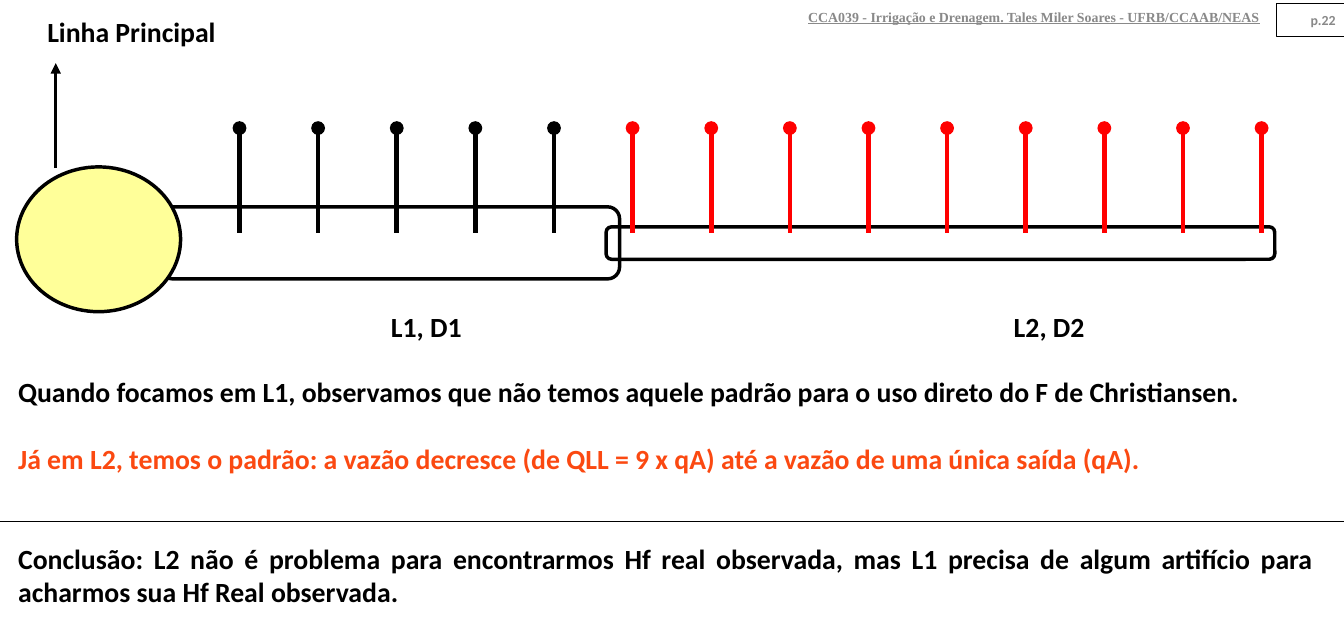
from lxml.etree import SubElement
from pptx import Presentation
from pptx.dml.color import RGBColor
from pptx.enum.shapes import MSO_CONNECTOR, MSO_SHAPE
from pptx.enum.text import MSO_ANCHOR, PP_ALIGN
from pptx.oxml.ns import qn
from pptx.util import Cm, Pt

WIDE, HIGH = Cm(41), Cm(19.05)
BLACK = RGBColor(0x00, 0x00, 0x00)
WHITE = RGBColor(0xFF, 0xFF, 0xFF)
GREY = RGBColor(0x89, 0x89, 0x89)
RED = RGBColor(0xFF, 0x00, 0x00)
ORANGE = RGBColor(0xFB, 0x49, 0x11)
YELLOW = RGBColor(0xFF, 0xFF, 0x99)

FIRST, PITCH = 17.82, 5.85
NEAR, FAR = 5, 9
LABELS = [
    ("Linha Principal", (1.73, 1.73, 16.11, 6.8)),
    ("L1, D1", (16.85, 48.93, 29.74, 6.8)),
    ("L2, D2", (63.19, 48.93, 29.74, 6.8)),
]
PIPES = [(11.96, 33.15, 34.14, 11.55), (45.1, 36.35, 49.75, 5.2)]
BODY = [
    ("Quando focamos em L1, observamos que não temos aquele padrão "
     "para o uso direto do F de Christiansen.", BLACK, 0),
    ("Já em L2, temos o padrão: a vazão decresce (de QLL = 9 x qA) "
     "até a vazão de uma única saída (qA).", ORANGE, 29),
    ("Conclusão: L2 não é problema para encontrarmos Hf real observada, "
     "mas L1 precisa de algum artifício para acharmos sua Hf Real observada.",
     BLACK, 58),
]


def place(x, y):
    """Turn percentages of the slide's width and height into lengths."""
    return int(WIDE * x / 100), int(HIGH * y / 100)


def add_form(slide, kind, box, line, width, fill=None):
    """Add an outlined shape, filled only when a fill is given."""
    form = slide.shapes.add_shape(kind, *place(*box[:2]), *place(*box[2:]))
    form.shadow.inherit = False
    form.line.color.rgb = line
    form.line.width = Pt(width)
    if fill is None:
        form.fill.background()
    else:
        form.fill.solid()
        form.fill.fore_color.rgb = fill
    return form


def write(form, items, align, size=24, face="Calibri", anchor=MSO_ANCHOR.TOP):
    """Fill a shape with bold paragraphs of (text, colour, space before)."""
    frame = form.text_frame
    frame.word_wrap = True
    frame.vertical_anchor = anchor
    for rank, (text, color, space) in enumerate(items):
        para = frame.add_paragraph() if rank else frame.paragraphs[0]
        para.text = text
        para.alignment = align
        para.space_before = Pt(space)
        para.font.name = face
        para.font.size = Pt(size)
        para.font.bold = True
        para.font.color.rgb = color
    return frame


def add_line(slide, start, end, color, width, tip=None):
    """Add a straight line with an optional tip at its end."""
    link = slide.shapes.add_connector(
        MSO_CONNECTOR.STRAIGHT, *place(*start), *place(*end))
    link.line.color.rgb = color
    link.line.width = Pt(width)
    if tip:
        SubElement(link.line._get_or_add_ln(), qn("a:tailEnd"), type=tip)
    SubElement(link._element.spPr, qn("a:effectLst"))


def add_head(slide):
    """Add the course line and the page number."""
    course = slide.shapes.add_textbox(*place(43.74, 0), *place(50.62, 5.33))
    title = "CCA039 - Irrigação e Drenagem. Tales Miler Soares - UFRB/CCAAB/NEAS"
    frame = write(course, [(title, GREY, 0)], PP_ALIGN.RIGHT, 12,
                  "Times New Roman", MSO_ANCHOR.MIDDLE)
    frame.paragraphs[0].font.underline = True
    page = add_form(slide, MSO_SHAPE.RECTANGLE, (95, 0.53, 5, 5.33),
                    BLACK, 0.75)
    write(page, [("p.22", GREY, 0)], PP_ALIGN.RIGHT, 12,
          anchor=MSO_ANCHOR.MIDDLE)


def add_plan(slide):
    """Draw the main line, both pipes and their outlets."""
    for box in PIPES:
        add_form(slide, MSO_SHAPE.ROUNDED_RECTANGLE, box, BLACK, 3)
    add_line(slide, (4.15, 26.93), (4.15, 10.13), BLACK, 3, "triangle")
    for text, box in LABELS:
        label = add_form(slide, MSO_SHAPE.RECTANGLE, box, WHITE, 0.75)
        write(label, [(text, BLACK, 0)], PP_ALIGN.CENTER)
    for rank in range(NEAR + FAR):
        x = FIRST + rank * PITCH
        color = BLACK if rank < NEAR else RED
        add_line(slide, (x, 37.33), (x, 20.53), color, 4, "oval")
    add_form(slide, MSO_SHAPE.OVAL, (1.24, 26.75, 12.2, 23.2),
             BLACK, 3, YELLOW)


def main():
    """Build the slide and save it."""
    deck = Presentation()
    deck.slide_width, deck.slide_height = WIDE, HIGH
    slide = deck.slides.add_slide(deck.slide_layouts[6])
    add_head(slide)
    add_plan(slide)
    body = add_form(slide, MSO_SHAPE.RECTANGLE, (0.74, 59.4, 97.58, 38.8),
                    WHITE, 0.75)
    write(body, BODY, PP_ALIGN.JUSTIFY)
    add_line(slide, (0, 83.55), (100, 83.55), BLACK, 0.75)
    deck.save("out.pptx")


if __name__ == "__main__":
    main()
